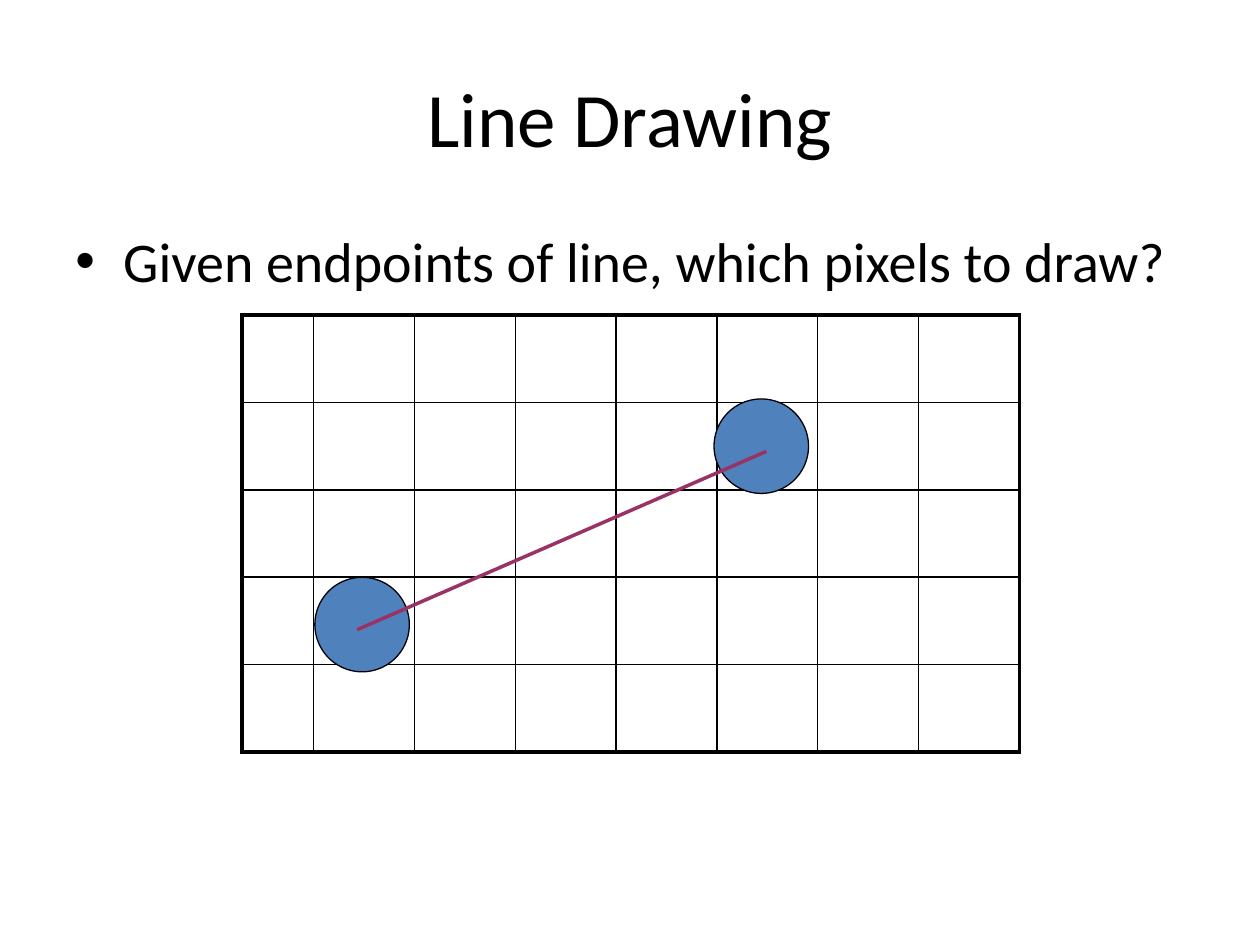
"""Build the line drawing slide: a pixel grid with a line between two endpoints."""
from dataclasses import dataclass

import lxml.etree
import pptx
import pptx.dml.color
import pptx.enum.shapes
import pptx.enum.text
import pptx.oxml.ns
import pptx.util

BLACK = pptx.dml.color.RGBColor(0x00, 0x00, 0x00)
BLUE = pptx.dml.color.RGBColor(0x4F, 0x81, 0xBD)
PLUM = pptx.dml.color.RGBColor(0x99, 0x33, 0x66)
FONT = "Calibri"
WIDTH = pptx.util.Inches(10)
HEIGHT = pptx.util.Inches(7.5)
MARGIN = 0.05
ROWS, COLUMNS = 5, 8
COLUMN_WIDTH = pptx.util.Inches(0.8)
FIRST_COLUMN_WIDTH = pptx.util.Inches(0.57)
ROW_HEIGHT = pptx.util.Inches(0.694)
GRID_LEFT = pptx.util.Inches(1.92)
GRID_TOP = pptx.util.Inches(2.5)
THIN, THICK = 1, 2.25
DIAMETER = pptx.util.Inches(0.75)


@dataclass(frozen=True)
class GridPoint:
    """A place in the grid, in columns after the first one and in rows."""

    column: float
    row: float

    @property
    def x(self) -> int:
        """Return the distance from the left edge of the slide."""
        return round(GRID_LEFT + FIRST_COLUMN_WIDTH + self.column * COLUMN_WIDTH)

    @property
    def y(self) -> int:
        """Return the distance from the top edge of the slide."""
        return round(GRID_TOP + self.row * ROW_HEIGHT)


@dataclass(frozen=True)
class TextBlock:
    """A line of text across the slide, with its place as shares of the height."""

    text: str
    top: float
    height: float
    size: float
    anchor: pptx.enum.text.MSO_ANCHOR
    alignment: pptx.enum.text.PP_ALIGN
    bullet: str = ""


TEXTS = (
    TextBlock("Line Drawing", 0.04, 1 / 6, 44,
              pptx.enum.text.MSO_ANCHOR.MIDDLE, pptx.enum.text.PP_ALIGN.CENTER),
    TextBlock("Given endpoints of line, which pixels to draw?", 7 / 30, 0.66, 32,
              pptx.enum.text.MSO_ANCHOR.TOP, pptx.enum.text.PP_ALIGN.LEFT, "•"),
)
ENDPOINTS = (GridPoint(0.48, 3.54), GridPoint(4.44, 1.5))
LINE_START, LINE_END = GridPoint(0.43, 3.6), GridPoint(4.49, 1.56)


def draw_text(slide: pptx.slide.Slide, block: TextBlock) -> None:
    """Draw a text block, with a hanging bullet where it has one."""
    box = slide.shapes.add_textbox(
        round(MARGIN * WIDTH), round(block.top * HEIGHT),
        round((1 - 2 * MARGIN) * WIDTH), round(block.height * HEIGHT))
    frame = box.text_frame
    frame.word_wrap = True
    frame.vertical_anchor = block.anchor
    paragraph = frame.paragraphs[0]
    paragraph.text = block.text
    paragraph.alignment = block.alignment
    if block.bullet:
        paragraph.space_before = pptx.util.Pt(0.2 * block.size)
        properties = paragraph._p.get_or_add_pPr()
        indent = pptx.util.Inches(0.38)
        properties.set("marL", str(indent))
        properties.set("indent", str(-indent))
        for tag, name, value in (("a:buFont", "typeface", "Arial"),
                                 ("a:buChar", "char", block.bullet)):
            mark = lxml.etree.SubElement(properties, pptx.oxml.ns.qn(tag))
            mark.set(name, value)
    paragraph.font.name = FONT
    paragraph.font.size = pptx.util.Pt(block.size)
    paragraph.font.color.rgb = BLACK


def draw_border(cell: pptx.table._Cell, side: str, points: float) -> None:
    """Draw one side of a cell."""
    border = lxml.etree.SubElement(
        cell._tc.get_or_add_tcPr(), pptx.oxml.ns.qn(f"a:ln{side}"))
    border.set("w", str(pptx.util.Pt(points)))
    fill = lxml.etree.SubElement(border, pptx.oxml.ns.qn("a:solidFill"))
    color = lxml.etree.SubElement(fill, pptx.oxml.ns.qn("a:srgbClr"))
    color.set("val", str(BLACK))


def draw_grid(slide: pptx.slide.Slide) -> None:
    """Draw the pixel grid with thin inner lines and a thick frame."""
    pixels = slide.shapes.add_table(
        ROWS, COLUMNS, GRID_LEFT, GRID_TOP,
        FIRST_COLUMN_WIDTH + (COLUMNS - 1) * COLUMN_WIDTH, ROWS * ROW_HEIGHT).table
    pixels.first_row = False
    pixels.horz_banding = False
    for index, column in enumerate(pixels.columns):
        column.width = COLUMN_WIDTH if index else FIRST_COLUMN_WIDTH
    for row_index, row in enumerate(pixels.rows):
        row.height = ROW_HEIGHT
        for column_index, cell in enumerate(row.cells):
            outer_sides = {"L": column_index == 0, "R": column_index == COLUMNS - 1,
                           "T": row_index == 0, "B": row_index == ROWS - 1}
            for side, is_outer in outer_sides.items():
                draw_border(cell, side, THICK if is_outer else THIN)
            cell.fill.background()


def draw_endpoint(slide: pptx.slide.Slide, center: GridPoint) -> None:
    """Draw a round endpoint around its centre."""
    dot = slide.shapes.add_shape(
        pptx.enum.shapes.MSO_SHAPE.OVAL, center.x - DIAMETER // 2,
        center.y - DIAMETER // 2, DIAMETER, DIAMETER)
    dot.shadow.inherit = False
    dot.fill.solid()
    dot.fill.fore_color.rgb = BLUE
    dot.line.color.rgb = BLACK
    dot.line.width = pptx.util.Pt(0.75)


def draw_line(slide: pptx.slide.Slide, start: GridPoint, end: GridPoint) -> None:
    """Draw the line between two places in the grid."""
    segment = slide.shapes.add_connector(
        pptx.enum.shapes.MSO_CONNECTOR.STRAIGHT, start.x, start.y, end.x, end.y)
    segment.line.color.rgb = PLUM
    segment.line.width = pptx.util.Pt(2)
    lxml.etree.SubElement(segment._element.spPr, pptx.oxml.ns.qn("a:effectLst"))


def main() -> None:
    """Build and save the presentation."""
    presentation = pptx.Presentation()
    presentation.slide_width = WIDTH
    presentation.slide_height = HEIGHT
    slide = presentation.slides.add_slide(presentation.slide_layouts[6])
    for block in TEXTS:
        draw_text(slide, block)
    draw_grid(slide)
    for endpoint in ENDPOINTS:
        draw_endpoint(slide, endpoint)
    draw_line(slide, LINE_START, LINE_END)
    presentation.save("out.pptx")


if __name__ == "__main__":
    main()
